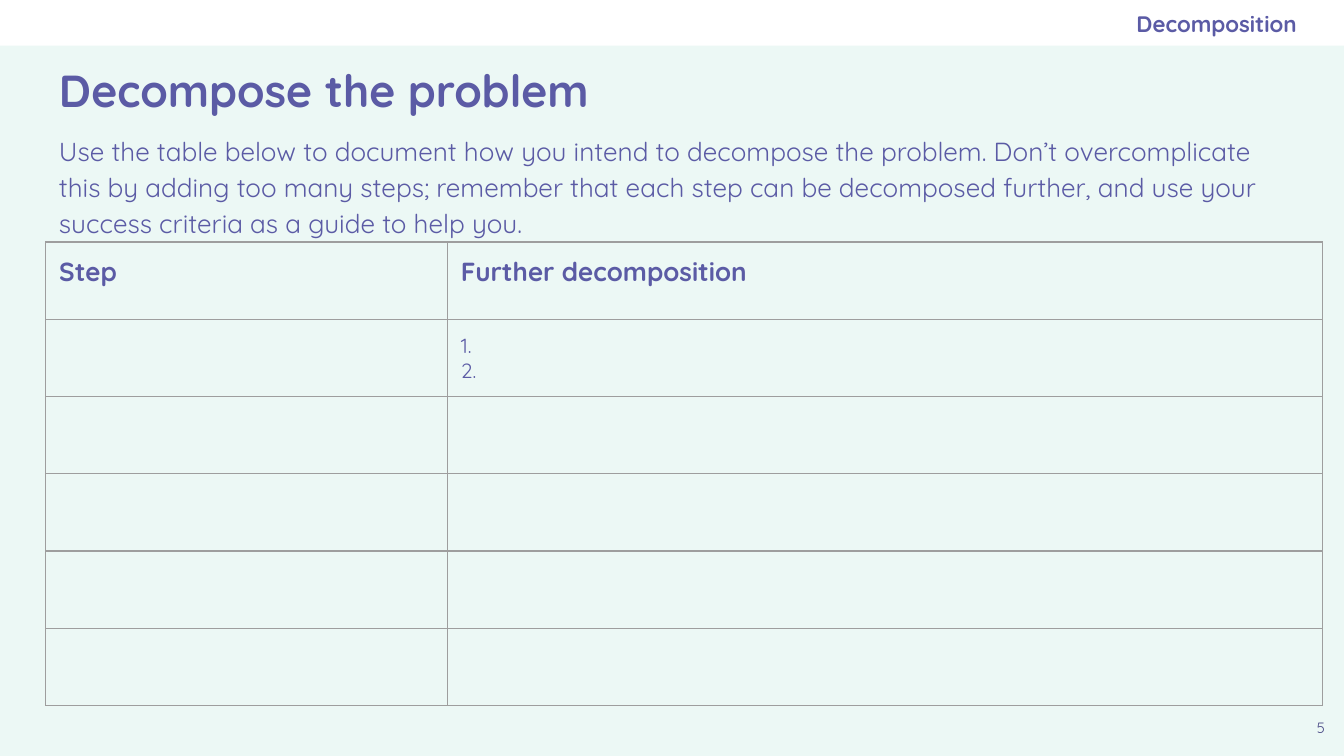
from lxml import etree
from pptx import Presentation, util as u
from pptx.dml.color import RGBColor
from pptx.enum import shapes, text
from pptx.oxml.ns import qn

W = 10
H = W * 9 / 16
EDGE = 0.34
BODY = W - 2 * EDGE
PAD = 0.1
INK, DARK, PALE, WHITE, GREY = "5B5BA5", "494985", "ECF8F5", "FFFFFF", "9E9E9E"
LEFT, MID, RIGHT = text.PP_ALIGN.LEFT, text.PP_ALIGN.CENTER, text.PP_ALIGN.RIGHT

INTRO = (
    "Use the table below to document how you intend to decompose the problem. "
    "Don’t overcomplicate this by adding too many steps; remember that each step "
    "can be decomposed further, and use your success criteria as a guide to help you."
)
TEXTS = [
    (INTRO, (EDGE, 0.87, BODY, 0.48), dict(size=14, gap=1.15)),
    ("Decompose the problem", (EDGE, 0.28, BODY, 0.77), dict(size=24, bold=True, middle=True)),
    ("5", (W - EDGE, 5.28, EDGE, 0.35), dict(size=8, ink=DARK, align=MID)),
    ("Decomposition", (5.75, 0, 3.9, 0.35),
     dict(size=12, bold=True, align=RIGHT, middle=True, right=0)),
]
HEADS = ["Step", "Further decomposition"]
STEPS = [["", "1.\n2."]] + [["", ""]] * 4
COLS = [2.99, 6.51]
TOP, TALL = 1.8, 3.45


def color(code):
    return RGBColor.from_string(code)


def inches(box):
    return [u.Inches(n) for n in box]


def write(frame, words, size=11, bold=False, ink=INK, align=LEFT, gap=None):
    for i, line in enumerate(words.split("\n")):
        par = frame.add_paragraph() if i else frame.paragraphs[0]
        par.alignment = align
        if gap:
            par.line_spacing = gap
        font = par.font
        if line:
            run = par.add_run()
            run.text = line
            font = run.font
        font.name, font.size, font.bold = "Quicksand", u.Pt(size), bold
        font.color.rgb = color(ink)


def label(slide, words, box, middle=False, right=PAD, **form):
    frame = slide.shapes.add_textbox(*inches(box)).text_frame
    frame.word_wrap = True
    frame.margin_left = frame.margin_top = frame.margin_bottom = u.Inches(PAD)
    frame.margin_right = u.Inches(right)
    frame.vertical_anchor = text.MSO_ANCHOR.MIDDLE if middle else text.MSO_ANCHOR.TOP
    write(frame, words, **form)


def border(cell):
    props = cell._tc.get_or_add_tcPr()
    for i, side in enumerate(("lnL", "lnR", "lnT", "lnB")):
        line = etree.Element(qn("a:" + side), w=str(u.Pt(0.75)))
        fill = etree.SubElement(line, qn("a:solidFill"))
        etree.SubElement(fill, qn("a:srgbClr"), val=GREY)
        props.insert(i, line)


def grid(slide):
    rows = [HEADS] + STEPS
    box = inches((EDGE, TOP, sum(COLS), TALL))
    table = slide.shapes.add_table(len(rows), len(COLS), *box).table
    table.first_row = table.horz_banding = False
    for col, wide in zip(table.columns, COLS):
        col.width = u.Inches(wide)
    for r, row in enumerate(rows):
        table.rows[r].height = u.Inches(TALL / len(rows))
        for c, words in enumerate(row):
            cell = table.cell(r, c)
            cell.fill.background()
            cell.margin_left = cell.margin_right = u.Inches(PAD)
            cell.margin_top = cell.margin_bottom = u.Inches(PAD)
            border(cell)
            write(cell.text_frame, words, size=11 if r else 14, bold=r == 0)


def main():
    deck = Presentation()
    deck.slide_width, deck.slide_height = inches((W, H))
    slide = deck.slides.add_slide(deck.slide_layouts[6])
    slide.background.fill.solid()
    slide.background.fill.fore_color.rgb = color(PALE)

    band = slide.shapes.add_shape(shapes.MSO_SHAPE.RECTANGLE, *inches((0, 0, W, EDGE)))
    band.shadow.inherit = False
    band.fill.solid()
    band.fill.fore_color.rgb = color(WHITE)
    band.line.fill.background()

    for words, box, form in TEXTS:
        label(slide, words, box, **form)
    grid(slide)
    deck.save("out.pptx")


if __name__ == "__main__":
    main()
